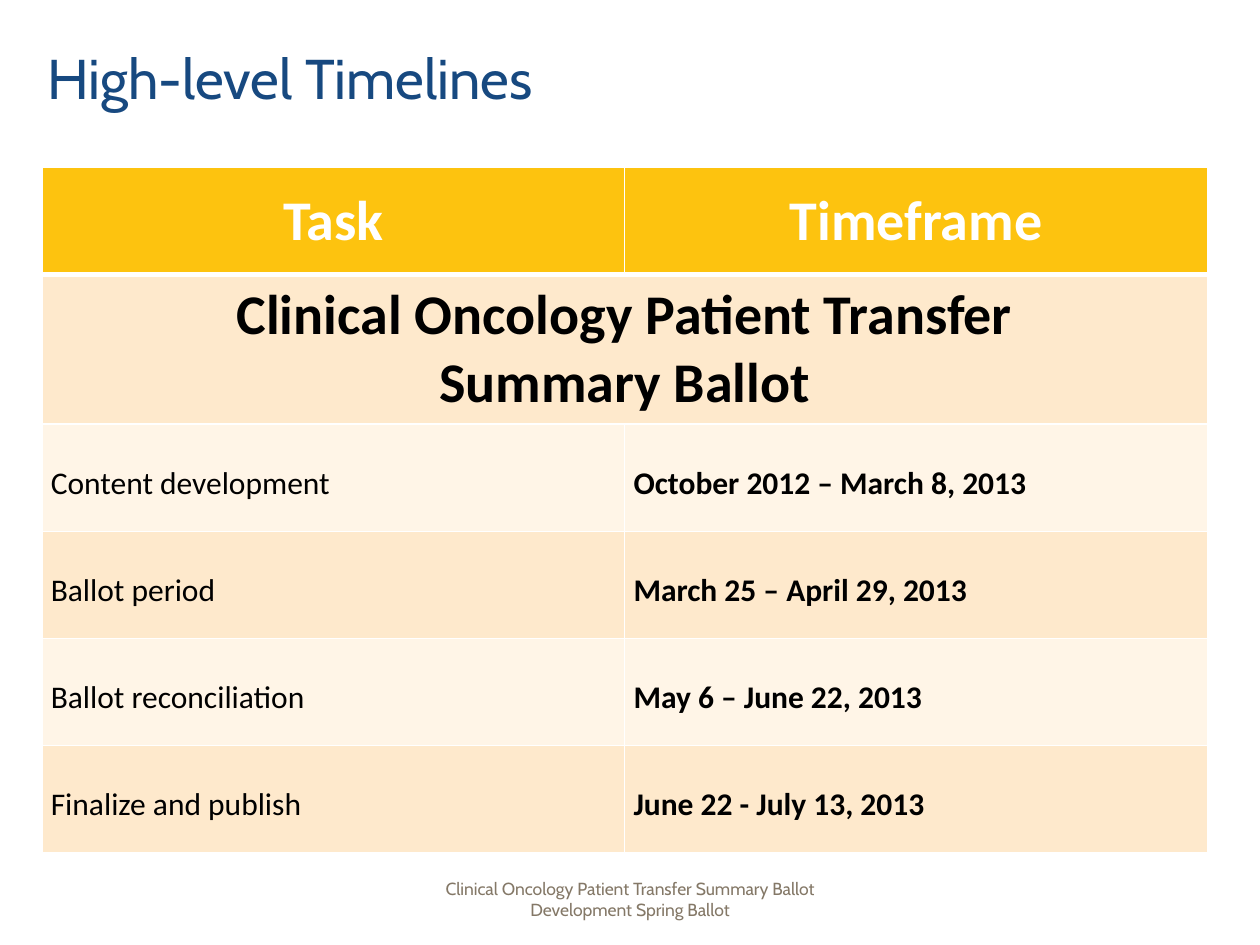
from lxml import etree
from pptx import Presentation
from pptx.dml.color import RGBColor
from pptx.enum.text import MSO_ANCHOR, PP_ALIGN
from pptx.oxml.ns import qn
from pptx.util import Inches, Pt

LEFT, CENTER = PP_ALIGN.LEFT, PP_ALIGN.CENTER
MIDDLE = MSO_ANCHOR.MIDDLE
NAVY = RGBColor(0x17, 0x49, 0x80)
GOLD = RGBColor(0xFD, 0xC3, 0x0F)
PEACH = RGBColor(0xFE, 0xE9, 0xCC)
CREAM = RGBColor(0xFF, 0xF5, 0xE7)
TAUPE = RGBColor(0x84, 0x78, 0x67)
WHITE = RGBColor(0xFF, 0xFF, 0xFF)
BLACK = RGBColor(0, 0, 0)

TASKS = [
    ("Content development", "October 2012 – March 8, 2013"),
    ("Ballot period", "March 25 – April 29, 2013"),
    ("Ballot reconciliation", "May 6 – June 22, 2013"),
    ("Finalize and publish", "June 22 - July 13, 2013"),
]


def add_text(paragraph, text, font, size, color, align, bold=False):
    paragraph.alignment = align
    run = paragraph.add_run()
    run.text = text
    run.font.name = font
    run.font.size = Pt(size)
    run.font.bold = bold
    run.font.color.rgb = color


def style_cell(cell, fill, top=1, bottom=1):
    """White borders (widths in points) and a plain fill."""
    props = cell._tc.get_or_add_tcPr()
    for side, width in (("L", 1), ("R", 1), ("T", top), ("B", bottom)):
        line = etree.SubElement(props, qn(f"a:ln{side}"), w=str(Pt(width)))
        solid = etree.SubElement(line, qn("a:solidFill"))
        etree.SubElement(solid, qn("a:srgbClr"), val=str(WHITE))
    cell.fill.solid()
    cell.fill.fore_color.rgb = fill
    cell.vertical_anchor = MIDDLE


prs = Presentation()
prs.slide_width, prs.slide_height = Inches(10), Inches(7.5)
slide = prs.slides.add_slide(prs.slide_layouts[5])
margin = prs.slide_width // 30

# Title
title = slide.shapes.title
title.left, title.top = margin, Inches(0.08)
title.width, title.height = prs.slide_width - 2 * margin, Inches(1.13)
heading = title.text_frame
heading.margin_left = heading.margin_right = Inches(0.04)
heading.margin_top = heading.margin_bottom = Inches(0.04)
heading.vertical_anchor = MIDDLE
heading.paragraphs[0].line_spacing = 0.9
add_text(heading.paragraphs[0], "High-level Timelines", "Cabin", 32, NAVY, LEFT)

# Timeline table: equal rows, with a taller one for the two-line ballot name
row_height, ballot_height = Inches(0.85), Inches(1.18)
timeline = slide.shapes.add_table(
    len(TASKS) + 2, 2, margin, Inches(1.33), Inches(9.25),
    row_height * (len(TASKS) + 1) + ballot_height).table
for row in timeline.rows:
    row.height = row_height
timeline.rows[1].height = ballot_height

# Header row
for col, label in enumerate(("Task", "Timeframe")):
    header = timeline.cell(0, col)
    style_cell(header, GOLD, bottom=3)
    add_text(header.text_frame.paragraphs[0], label, "Calibri", 32, WHITE, CENTER, True)

# Ballot name across both columns
ballot = timeline.cell(1, 0)
ballot.merge(timeline.cell(1, 1))
for col in range(2):
    style_cell(timeline.cell(1, col), PEACH, top=3)
ballot_lines = ballot.text_frame
add_text(ballot_lines.paragraphs[0], "Clinical Oncology Patient Transfer",
         "Calibri", 32, BLACK, CENTER, True)
add_text(ballot_lines.add_paragraph(), "Summary Ballot",
         "Calibri", 32, BLACK, CENTER, True)

# Task rows: dates in bold, text set slightly below the middle
for index, entries in enumerate(TASKS):
    for col, entry in enumerate(entries):
        cell = timeline.cell(index + 2, col)
        style_cell(cell, (CREAM, PEACH)[index % 2])
        cell.margin_left = cell.margin_right = Inches(0.07)
        cell.margin_top, cell.margin_bottom = Inches(0.24), 0
        paragraph = cell.text_frame.paragraphs[0]
        paragraph.line_spacing = Pt(11)
        add_text(paragraph, entry, "Calibri", 18, BLACK, LEFT, col == 1)

# Footer, centred on the slide
footer_width = Inches(3.67)
footer = slide.shapes.add_textbox(
    (prs.slide_width - footer_width) // 2, Inches(6.92), footer_width, Inches(0.44))
footer.text_frame.word_wrap = True
add_text(footer.text_frame.paragraphs[0],
         "Clinical Oncology Patient Transfer Summary Ballot Development Spring Ballot",
         "Cabin", 10, TAUPE, CENTER)

prs.save("out.pptx")
